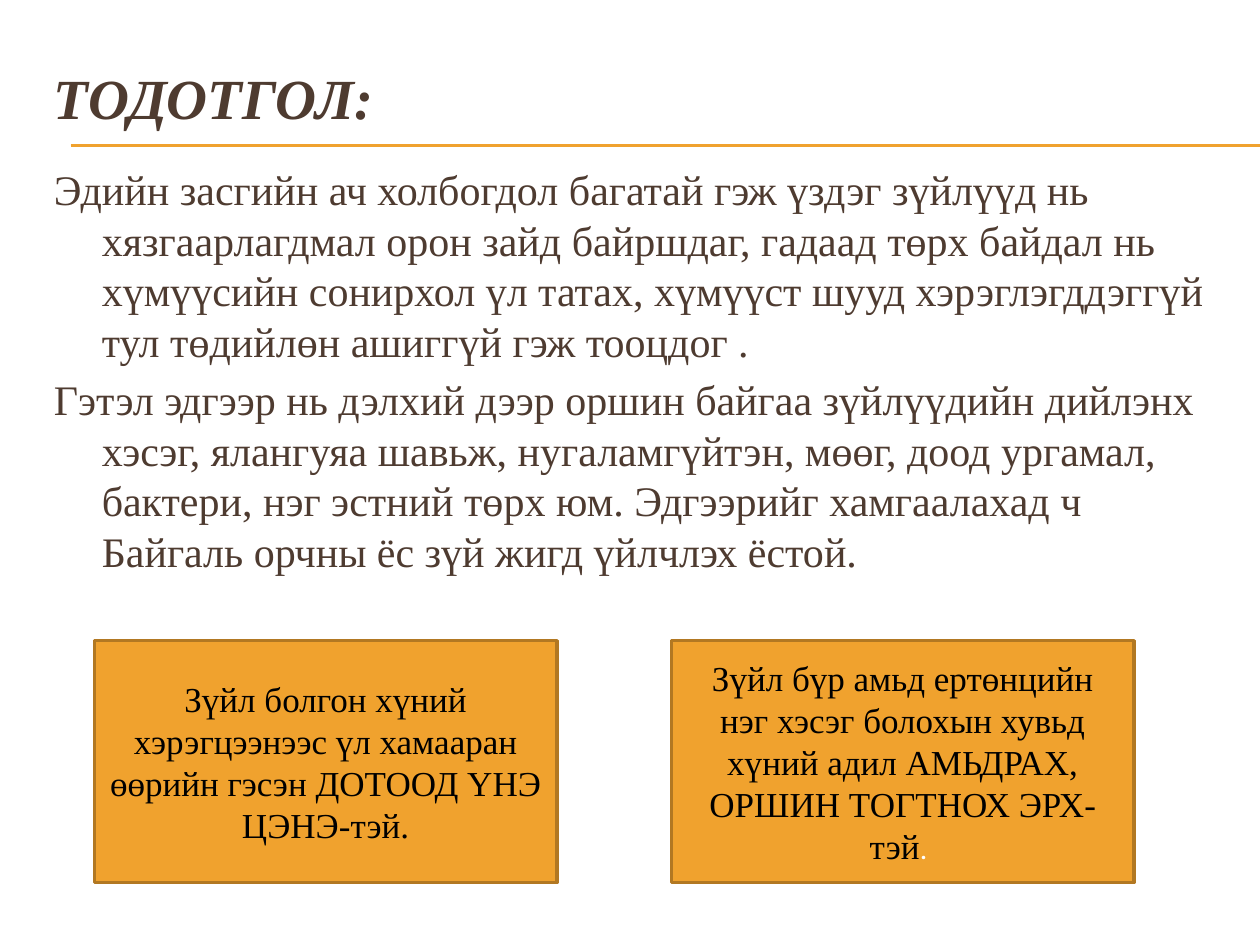
from pptx import Presentation, util as u
from pptx.dml.color import RGBColor
from pptx.enum import shapes, text
from pptx.oxml.ns import qn
from lxml import etree

HUES = {"ink": "4E3B30", "gold": "F0A22E", "edge": "B27822",
        "black": "000000", "white": "FFFFFF"}
SERIF = "Times New Roman"
WIDE, HIGH = u.Inches(10), u.Inches(7.5)
LEFT, SPAN = 0.033, 0.95

TITLE = "ТОДОТГОЛ:"
BODY = [
    "Эдийн засгийн ач холбогдол багатай гэж үздэг зүйлүүд нь хязгаарлагдмал "
    "орон зайд байршдаг, гадаад төрх байдал нь хүмүүсийн сонирхол үл татах, "
    "хүмүүст шууд хэрэглэгддэггүй тул төдийлөн ашиггүй гэж тооцдог .",
    "Гэтэл эдгээр нь дэлхий дээр оршин байгаа зүйлүүдийн дийлэнх хэсэг, "
    "ялангуяа шавьж, нугаламгүйтэн, мөөг, доод ургамал, бактери, нэг эстний "
    "төрх юм. Эдгээрийг хамгаалахад ч Байгаль орчны ёс зүй жигд үйлчлэх ёстой.",
]
CARDS = [
    "Зүйл болгон хүний хэрэгцээнээс үл хамааран өөрийн гэсэн "
    "ДОТООД ҮНЭ ЦЭНЭ-тэй.",
    "Зүйл бүр амьд ертөнцийн нэг хэсэг болохын хувьд хүний адил "
    "АМЬДРАХ, ОРШИН ТОГТНОХ ЭРХ-тэй",
]


def hue(name):
    """Return the named colour."""
    return RGBColor.from_string(HUES[name])


def place(x, y, w, h):
    """Turn shares of the slide into lengths."""
    return int(x * WIDE), int(y * HIGH), int(w * WIDE), int(h * HIGH)


def style(font, size, tone, name=SERIF):
    """Set the face, size and colour of a font."""
    font.name, font.size = name, u.Pt(size)
    font.color.rgb = hue(tone)


def rule(slide, y):
    """Draw a thin gold line to the right edge."""
    line = slide.shapes.add_connector(
        shapes.MSO_CONNECTOR.STRAIGHT, u.Inches(0.56), u.Inches(y),
        WIDE, u.Inches(y))
    line.line.color.rgb = hue("gold")
    line.line.width = u.Pt(0.75)
    etree.SubElement(line.element.spPr, qn("a:effectLst"))


def label(slide, y, h, lines, size):
    """Add a wrapped text box and return its frame."""
    frame = slide.shapes.add_textbox(*place(LEFT, y, SPAN, h)).text_frame
    frame.word_wrap = True
    frame.text = "\n".join(lines)
    for para in frame.paragraphs:
        style(para.font, size, "ink")
    return frame


def head(slide):
    """Add the title."""
    frame = label(slide, 0.067, 0.123, [TITLE], 32.4)
    frame.margin_top = 0
    font = frame.paragraphs[0].font
    font.bold = font.italic = True


def body(slide):
    """Add the paragraphs with hanging indents."""
    for para in label(slide, 0.167, 0.777, BODY, 24).paragraphs:
        para.space_before = u.Pt(4.8)
        props = para._p.get_or_add_pPr()
        props.set("marL", str(u.Inches(0.38)))
        props.set("indent", str(-u.Inches(0.38)))


def card(slide, x, words):
    """Add a gold box with centred words and return its paragraph."""
    box = slide.shapes.add_shape(
        shapes.MSO_SHAPE.RECTANGLE, *place(x, 0.678, 0.367, 0.256))
    box.shadow.inherit = False
    box.fill.solid()
    box.fill.fore_color.rgb = hue("gold")
    box.line.color.rgb = hue("edge")
    box.line.width = u.Pt(2)
    frame = box.text_frame
    frame.word_wrap = True
    frame.vertical_anchor = text.MSO_ANCHOR.MIDDLE
    para = frame.paragraphs[0]
    para.alignment = text.PP_ALIGN.CENTER
    run = para.add_run()
    run.text = words
    style(run.font, 20, "black")
    return para


def main():
    """Build and save the slide."""
    deck = Presentation()
    deck.slide_width, deck.slide_height = WIDE, HIGH
    slide = deck.slides.add_slide(deck.slide_layouts[6])
    for y in (1.15, 1.16):
        rule(slide, y)
    head(slide)
    body(slide)
    for col, words in enumerate(CARDS):
        para = card(slide, 0.075 + col * 0.458, words)
    dot = para.add_run()
    dot.text = ". "
    style(dot.font, 18, "white", "Roboto")
    deck.save("out.pptx")


if __name__ == "__main__":
    main()
